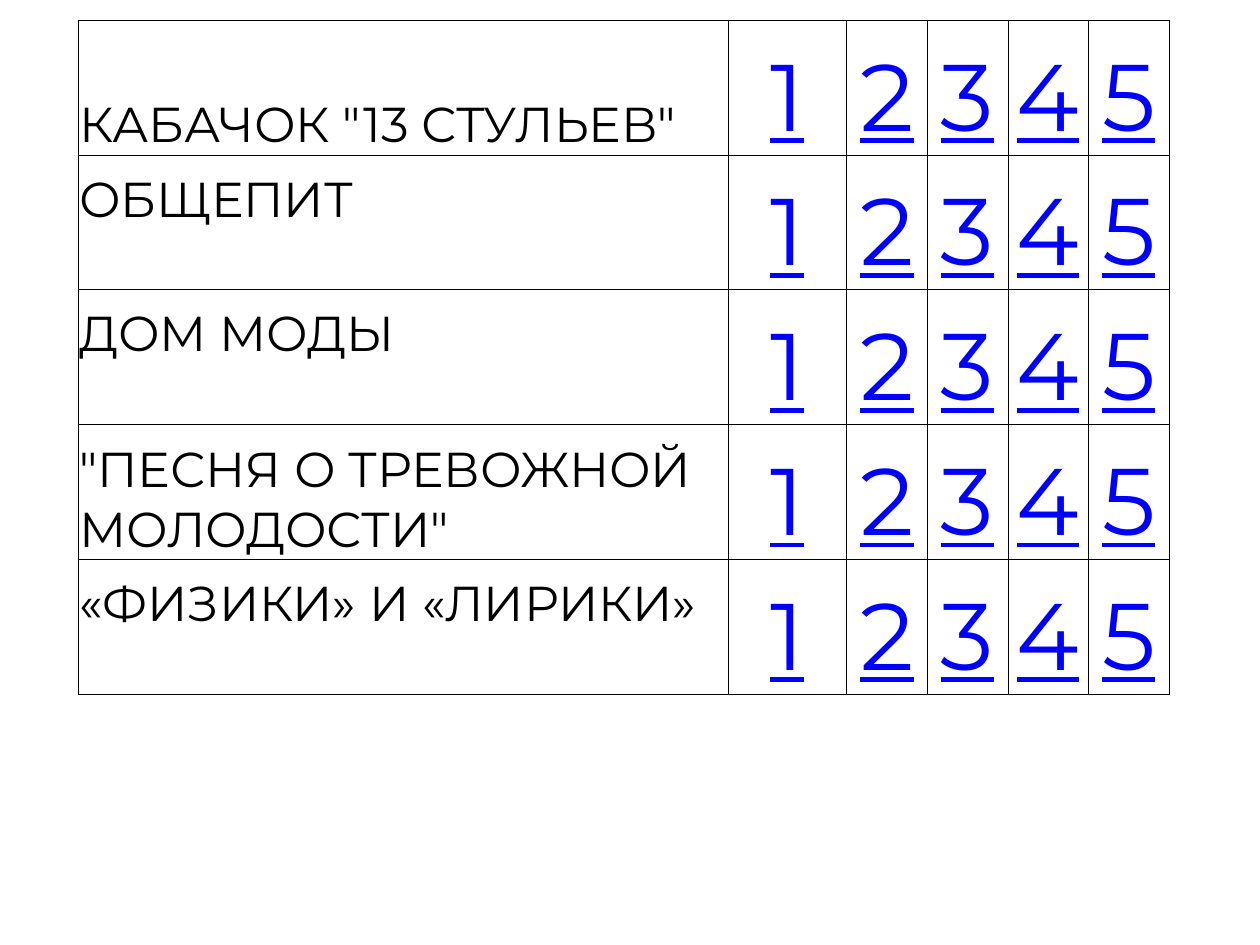
"""Build a quiz board slide: five topics with five numbered questions each."""
from pptx import Presentation
from pptx.dml.color import RGBColor
from pptx.enum.text import MSO_ANCHOR, PP_ALIGN
from pptx.oxml import parse_xml
from pptx.oxml.ns import nsdecls
from pptx.util import Inches, Pt

TOPICS = [
    ('КАБАЧОК "13 СТУЛЬЕВ"', 0),
    ("ОБЩЕПИТ", 0.48),
    ("ДОМ МОДЫ", 0.48),
    ('"ПЕСНЯ О ТРЕВОЖНОЙ МОЛОДОСТИ"', 0),
    ("«ФИЗИКИ» И «ЛИРИКИ»", 0.48),
]
NUMBERS = ["1", "2", "3", "4", "5"]
COL_WIDTHS = [5.16, 0.94] + [0.64] * 4
ROW_HEIGHT = 1.07
TOPIC = {"size": 28, "color": "000000", "underline": False, "align": PP_ALIGN.LEFT}
NUMBER = {"size": 54, "color": "0000FF", "underline": True, "align": PP_ALIGN.CENTER}


def rgb(value):
    """Turn a hex string into a colour."""
    return RGBColor.from_string(value)


def add_borders(cell, color="000000", width=0.5):
    """Draw a solid line on all four sides of a cell."""
    tc_pr = cell._tc.get_or_add_tcPr()
    for side in "LRTB":
        tc_pr.append(parse_xml(
            f'<a:ln{side} {nsdecls("a")} w="{Pt(width)}"><a:solidFill>'
            f'<a:srgbClr val="{color}"/></a:solidFill></a:ln{side}>'))


def fill_cell(cell, text, fmt, bottom=0):
    """Write formatted text into a bordered cell without fill."""
    add_borders(cell)
    cell.fill.background()
    layout = {"margin_left": Inches(0.01), "margin_right": Inches(0.01),
              "margin_top": Inches(0.01), "margin_bottom": Inches(bottom),
              "vertical_anchor": MSO_ANCHOR.BOTTOM}
    for name, value in layout.items():
        setattr(cell, name, value)
    p = cell.text_frame.paragraphs[0]
    p.alignment = fmt["align"]
    r = p.add_run()
    r.text = text
    font = {"name": "Montserrat", "size": Pt(fmt["size"]), "underline": fmt["underline"]}
    for name, value in font.items():
        setattr(r.font, name, value)
    r.font.color.rgb = rgb(fmt["color"])


def add_board(s):
    """Add the table of topics and question numbers."""
    table = s.shapes.add_table(
        len(TOPICS), len(COL_WIDTHS), Inches(0.62), Inches(0.16),
        Inches(sum(COL_WIDTHS)), Inches(ROW_HEIGHT * len(TOPICS))).table
    table.first_row = table.horz_banding = False
    for col, width in zip(table.columns, COL_WIDTHS):
        col.width = Inches(width)
    for row, (topic, bottom) in zip(table.rows, TOPICS):
        row.height = Inches(ROW_HEIGHT)
        topic_cell, *number_cells = row.cells
        fill_cell(topic_cell, topic, TOPIC, bottom)
        for cell, number in zip(number_cells, NUMBERS):
            fill_cell(cell, number, NUMBER)


def main():
    """Create the slide and save it."""
    prs = Presentation()
    prs.slide_width, prs.slide_height = Inches(10), Inches(7.5)
    s = prs.slides.add_slide(prs.slide_layouts[6])
    add_board(s)
    prs.save("out.pptx")


if __name__ == "__main__":
    main()
